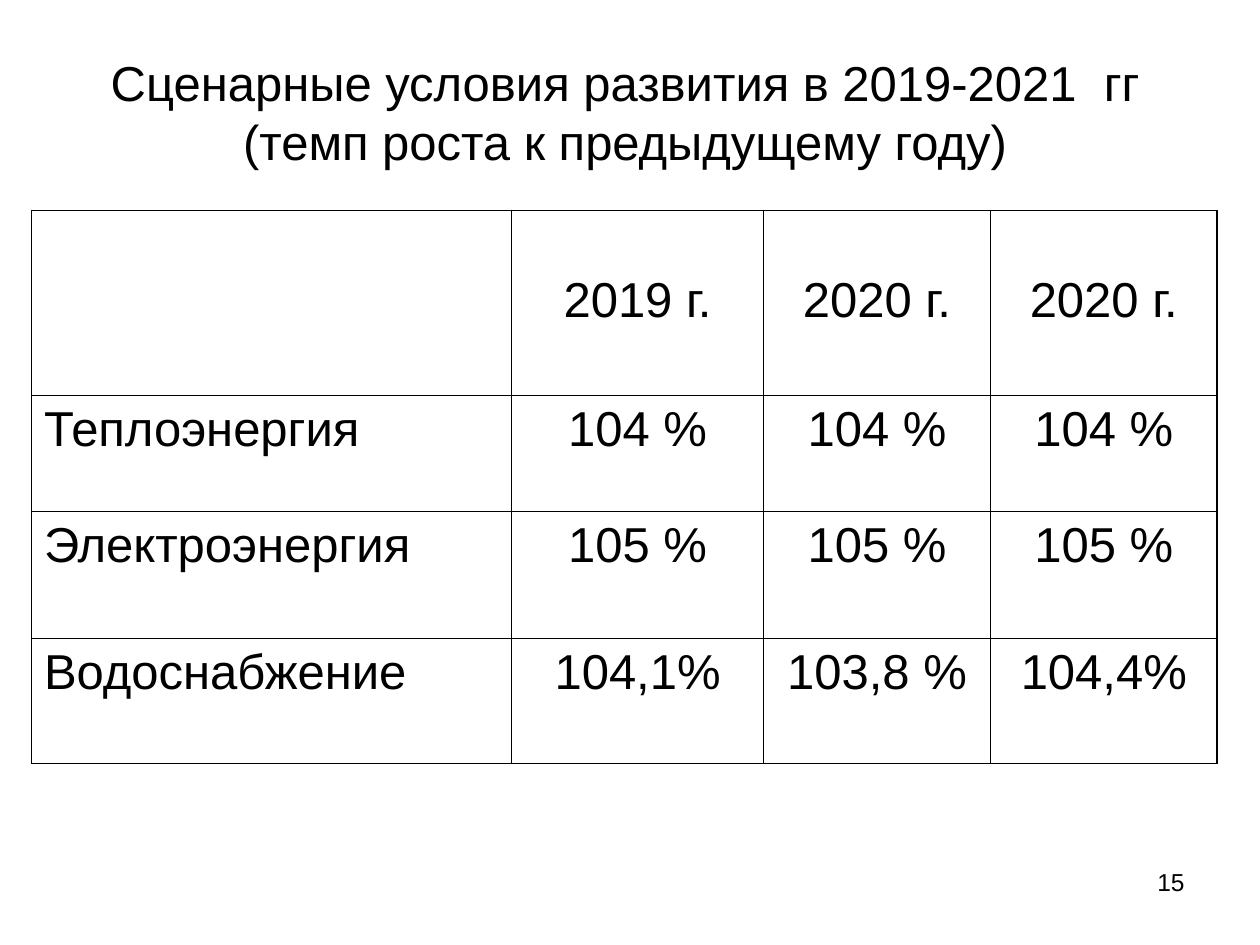
import pptx
import pptx.dml.color
import pptx.enum.text
import pptx.oxml
import pptx.oxml.ns
import pptx.util

Inches = pptx.util.Inches
ALIGN = pptx.enum.text.PP_ALIGN
ANCHOR = pptx.enum.text.MSO_ANCHOR

INK = "000000"
PAPER = "FFFFFF"
COLUMN_WIDTHS = (3.81, 2, 1.8, 1.8)
ROW_HEIGHTS = (1.47, 0.92, 1.01, 0.99)
GROWTH_ROWS = (
    ("", "2019 г.", "2020 г.", "2020 г."),
    ("Теплоэнергия", "104 %", "104 %", "104 %"),
    ("Электроэнергия", "105 %", "105 %", "105 %"),
    ("Водоснабжение", "104,1%", "103,8 %", "104,4%"),
)


def color(value):
    return pptx.dml.color.RGBColor.from_string(value)


def write_text(frame, text, size=28, align=ALIGN.LEFT, anchor=ANCHOR.TOP):
    frame.word_wrap = True
    frame.vertical_anchor = anchor
    para = frame.paragraphs[0]
    para.alignment = align
    span = para.add_run()
    span.text = text
    span.font.name = "Arial"
    span.font.size = pptx.util.Pt(size)
    span.font.color.rgb = color(INK)


def add_text_box(page, box, text, **text_format):
    frame = page.shapes.add_textbox(*map(Inches, box)).text_frame
    write_text(frame, text, **text_format)
    return frame


def add_title(page, box):
    frame = add_text_box(
        page, box,
        "Сценарные условия развития в 2019-2021  гг (темп роста к предыдущему году)",
        align=ALIGN.CENTER, anchor=ANCHOR.MIDDLE)
    # Lift the two lines clear of the table
    frame.margin_bottom = Inches(0.5)


def add_cell_borders(cell, width=1):
    # Borders must come before the fill in the cell properties
    properties = cell._tc.get_or_add_tcPr()
    for position, side in enumerate(("lnL", "lnR", "lnT", "lnB")):
        properties.insert(position, pptx.oxml.parse_xml(
            f'<a:{side} {pptx.oxml.ns.nsdecls("a")} w="{pptx.util.Pt(width)}">'
            f'<a:solidFill><a:srgbClr val="{INK}"/></a:solidFill></a:{side}>'))


def add_growth_table(page, box):
    table = page.shapes.add_table(
        len(ROW_HEIGHTS), len(COLUMN_WIDTHS), *map(Inches, box)).table
    table.first_row = False
    table.horz_banding = False
    for column, width in zip(table.columns, COLUMN_WIDTHS):
        column.width = Inches(width)
    for row_index, (row, height) in enumerate(zip(table.rows, ROW_HEIGHTS)):
        row.height = Inches(height)
        for column_index, cell in enumerate(row.cells):
            cell.fill.solid()
            cell.fill.fore_color.rgb = color(PAPER)
            add_cell_borders(cell)
            # Year headings sit one line lower than the other text
            cell.margin_top = Inches(0.05 if row_index else 0.5)
            write_text(cell.text_frame, GROWTH_ROWS[row_index][column_index],
                       align=ALIGN.CENTER if column_index else ALIGN.LEFT)


def add_page_number(page, box):
    add_text_box(page, box, "15", size=14, align=ALIGN.RIGHT)


def main():
    deck = pptx.Presentation()
    deck.slide_width = Inches(10)
    deck.slide_height = Inches(7.5)
    page = deck.slides.add_slide(deck.slide_layouts[6])
    add_page_number(page, (7.17, 6.83, 2.33, 0.52))
    add_title(page, (0.5, 0.3, 8.92, 1.62))
    add_growth_table(page, (0.25, 1.67, sum(COLUMN_WIDTHS), sum(ROW_HEIGHTS)))
    deck.save("out.pptx")


if __name__ == "__main__":
    main()
